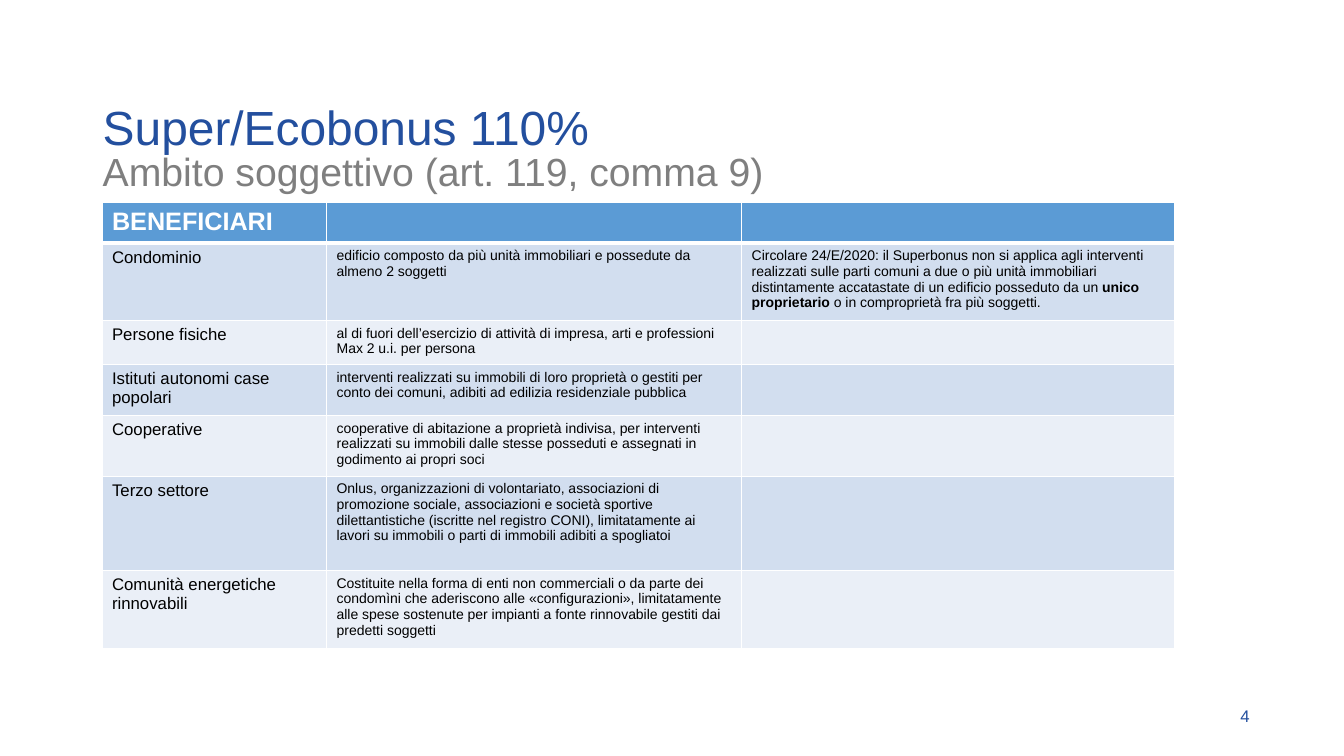
from dataclasses import dataclass

from lxml import etree
from pptx import Presentation
from pptx import util as u
from pptx.dml.color import RGBColor
from pptx.enum import text
from pptx.oxml import ns


@dataclass(frozen=True)
class Theme:
    font: str = "Arial"
    blue: str = "234F9E"
    grey: str = "7F7F7F"
    black: str = "000000"
    white: str = "FFFFFF"
    header_fill: str = "5B9BD5"
    band_fills: tuple = ("D2DEEF", "EAEFF7")
    title_size: float = 34.2
    subtitle_size: float = 28
    header_size: float = 18
    name_size: float = 12
    detail_size: float = 10
    number_size: float = 12


theme = Theme()


def format_runs(paragraph, size, color):
    for run in paragraph.runs:
        run.font.name = theme.font
        run.font.size = u.Pt(size)
        run.font.color.rgb = RGBColor.from_string(color)


def set_borders(cell, widths):
    properties = cell._tc.get_or_add_tcPr()
    for position, (side, width) in enumerate(widths.items()):
        line = etree.Element(ns.qn(f"a:ln{side}"), w=str(u.Pt(width)))
        fill = etree.SubElement(line, ns.qn("a:solidFill"))
        etree.SubElement(fill, ns.qn("a:srgbClr"), val=theme.white)
        properties.insert(position, line)


presentation = Presentation()
presentation.slide_width = u.Cm(33.87)
presentation.slide_height = u.Cm(19.05)
slide = presentation.slides.add_slide(presentation.slide_layouts[6])

# Title, subtitle and page number: left, top, width, height, wording, size, colour, anchor, spacing
labels = [
    (2.34, 2.51, 29.21, 1.52, "Super/Ecobonus 110%",
     theme.title_size, theme.blue, text.MSO_ANCHOR.MIDDLE, 0.9),
    (2.34, 3.73, 20.78, 1.37, "Ambito soggettivo (art. 119, comma 9)",
     theme.subtitle_size, theme.grey, text.MSO_ANCHOR.TOP, 0.9),
    (31.01, 17.65, 2.13, 0.76, "4",
     theme.number_size, theme.blue, text.MSO_ANCHOR.TOP, 1.0),
]
for left, top, width, height, wording, size, color, anchor, spacing in labels:
    shape = slide.shapes.add_textbox(u.Cm(left), u.Cm(top), u.Cm(width), u.Cm(height))
    shape.text_frame.word_wrap = True
    shape.text_frame.vertical_anchor = anchor
    shape.text_frame.text = wording
    paragraph = shape.text_frame.paragraphs[0]
    paragraph.line_spacing = spacing
    format_runs(paragraph, size, color)

# Beneficiaries: height, then one text per column; ** encloses bold words
rows = [
    (0.97, "**BENEFICIARI**", "", ""),
    (1.95, "Condominio",
     "edificio composto da più unità immobiliari e possedute da almeno 2 soggetti",
     "Circolare 24/E/2020: il Superbonus non si applica agli interventi realizzati sulle parti "
     "comuni a due o più unità immobiliari distintamente accatastate di un edificio posseduto "
     "da un **unico proprietario **o in comproprietà fra più soggetti."),
    (1.1, "Persone fisiche",
     "al di fuori dell’esercizio di attività di impresa, arti e professioni\n"
     "Max 2 u.i. per persona", ""),
    (1.29, "Istituti autonomi case popolari",
     "interventi realizzati su immobili di loro proprietà o gestiti per conto dei comuni, "
     "adibiti ad edilizia residenziale pubblica", ""),
    (1.52, "Cooperative",
     "cooperative di abitazione a proprietà indivisa, per interventi realizzati su immobili "
     "dalle stesse posseduti e assegnati in godimento ai propri soci", ""),
    (2.38, "Terzo settore",
     "Onlus, organizzazioni di volontariato, associazioni di promozione sociale, associazioni "
     "e società sportive dilettantistiche (iscritte nel registro CONI), limitatamente ai lavori "
     "su immobili o parti di immobili adibiti a spogliatoi", ""),
    (1.96, "Comunità energetiche rinnovabili",
     "Costituite nella forma di enti non commerciali o da parte dei condomìni che aderiscono "
     "alle «configurazioni», limitatamente alle spese sostenute per impianti a fonte "
     "rinnovabile gestiti dai predetti soggetti", ""),
]
column_widths = [5.66, 10.46, 10.92]

# Table
table = slide.shapes.add_table(
    len(rows), len(column_widths), u.Cm(2.57), u.Cm(5.11),
    u.Cm(sum(column_widths)), u.Cm(sum(row[0] for row in rows))).table
for column, width in zip(table.columns, column_widths):
    column.width = u.Cm(width)

for row_index, (height, *wordings) in enumerate(rows):
    table.rows[row_index].height = u.Cm(height)
    is_header = row_index == 0
    fill_color = theme.header_fill if is_header else theme.band_fills[(row_index - 1) % 2]
    text_color = theme.white if is_header else theme.black
    for column_index, wording in enumerate(wordings):
        cell = table.cell(row_index, column_index)
        cell.fill.solid()
        cell.fill.fore_color.rgb = RGBColor.from_string(fill_color)
        set_borders(cell, {"L": 1, "R": 1, "T": 3 if row_index == 1 else 1,
                           "B": 3 if is_header else 1})
        if is_header:
            size = theme.header_size
        else:
            size = theme.name_size if column_index == 0 else theme.detail_size
        for line_index, line in enumerate(wording.split("\n")):
            frame = cell.text_frame
            paragraph = frame.add_paragraph() if line_index else frame.paragraphs[0]
            for part_index, part in enumerate(line.split("**")):
                if part:
                    run = paragraph.add_run()
                    run.text = part
                    run.font.bold = part_index % 2 == 1
            format_runs(paragraph, size, text_color)

presentation.save("out.pptx")
